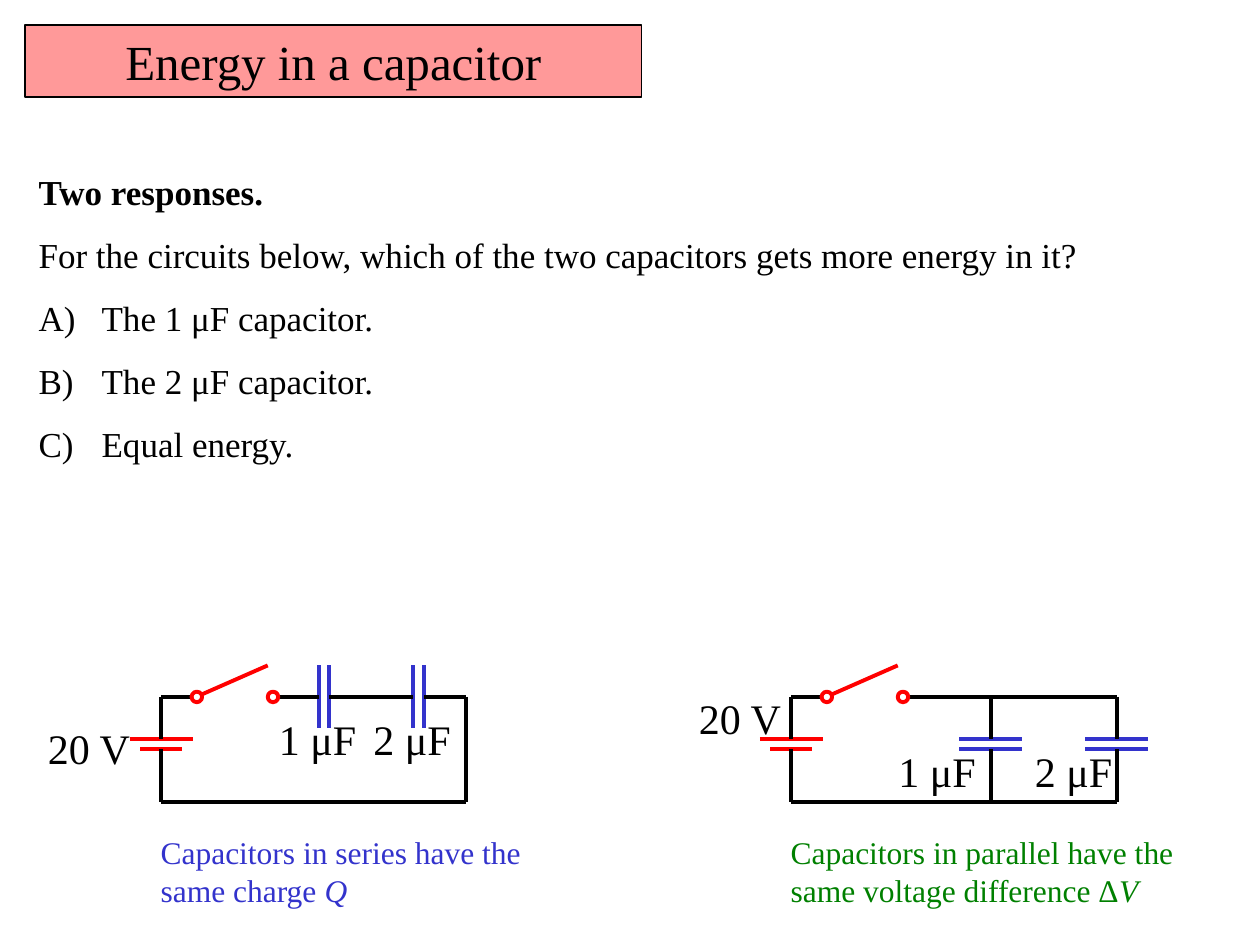
from lxml.etree import SubElement
from pptx import Presentation
from pptx.dml.color import RGBColor
from pptx.enum.shapes import MSO_CONNECTOR, MSO_SHAPE
from pptx.enum.text import MSO_ANCHOR, PP_ALIGN
from pptx.oxml.ns import qn
from pptx.util import Emu, Pt

PX = 9525  # 96 px to the inch
FONT = "Times New Roman"
BLACK, RED, BLUE, GREEN = "000000", "FF0000", "3333CC", "008000"
LINE_WIDTH = 2.25
CELL = 8      # gap between two plates and length of a lead
PLATE = 24    # half length of a long plate
HEIGHT = 80   # height of a circuit loop


def px(*lengths):
    return [Emu(length * PX) for length in lengths]


def rgb(value):
    return RGBColor.from_string(value)


def format_font(font, size, color=BLACK):
    font.name = FONT
    font.size = Pt(size)
    font.color.rgb = rgb(color)


def set_outline(shape, color, width):
    shape.line.color.rgb = rgb(color)
    shape.line.width = Pt(width)


class Circuit:
    """A group of parts placed relative to the top left corner of the loop."""

    def __init__(self, slide, left, top):
        self.left, self.top = left, top
        self.shapes = slide.shapes.add_group_shape().shapes

    def line(self, x1, y1, x2, y2, color=BLACK):
        ends = px(self.left + x1, self.top + y1, self.left + x2, self.top + y2)
        connector = self.shapes.add_connector(MSO_CONNECTOR.STRAIGHT, *ends)
        set_outline(connector, color, LINE_WIDTH)
        SubElement(connector._element.spPr, qn("a:effectLst"))

    def plates(self, x, y, color, second=PLATE, upright=False):
        """Two plates with leads; the first plate is centred on x, y."""
        def part(along1, across1, along2, across2, part_color=BLACK):
            if upright:
                self.line(x + along1, y + across1, x + along2, y + across2, part_color)
            else:
                self.line(x + across1, y + along1, x + across2, y + along2, part_color)

        part(0, -PLATE, 0, PLATE, color)
        part(CELL, -second, CELL, second, color)
        part(-CELL, 0, 0, 0)
        part(CELL, 0, 2 * CELL, 0)

    def switch(self):
        self.line(0, 0, 24, 0)
        self.line(88, 0, 112, 0)
        for x in (23, 81):
            box = px(self.left + x, self.top - 4, 8, 8)
            contact = self.shapes.add_shape(MSO_SHAPE.OVAL, *box)
            contact.shadow.inherit = False
            contact.fill.background()
            set_outline(contact, RED, LINE_WIDTH)
        self.line(31, -2, 81, -24, RED)

    def battery(self):
        self.plates(0, 32, RED, second=16)
        self.line(0, 24, 0, 0)
        self.line(0, 48, 0, HEIGHT)

    def text(self, x, y, width, height, content, size, color=BLACK, symbol=""):
        box = self.shapes.add_textbox(*px(self.left + x, self.top + y, width, height))
        box.text_frame.word_wrap = True
        paragraph = box.text_frame.paragraphs[0]
        paragraph.text = content
        if symbol:
            paragraph.add_run().text = symbol
            paragraph.runs[-1].font.italic = True
        for run in paragraph.runs:
            format_font(run.font, size, color)

    def labels(self, voltage_at, first_at, second_at):
        self.text(*voltage_at, 88, 48, "20 V", 24)
        self.text(*first_at, 104, 48, "1 μF", 24)
        self.text(*second_at, 104, 48, "2 μF", 24)

    def caption(self, content, symbol, color):
        self.text(-10, 99, 336, 68, content, 18, color, symbol)


def add_title(slide, left, top, width, height):
    title = slide.shapes.title
    title.left, title.top, title.width, title.height = px(left, top, width, height)
    title.fill.solid()
    title.fill.fore_color.rgb = rgb("FF9999")
    set_outline(title, BLACK, 0.75)
    title.text_frame.text = "Energy in a capacitor"
    title.text_frame.vertical_anchor = MSO_ANCHOR.TOP
    paragraph = title.text_frame.paragraphs[0]
    paragraph.alignment = PP_ALIGN.CENTER
    format_font(paragraph.runs[0].font, 28)


def add_question(slide, left, top, width, height):
    box = slide.shapes.add_textbox(*px(left, top, width, height))
    box.fill.solid()
    box.fill.fore_color.rgb = rgb("FFFFFF")
    frame = box.text_frame
    frame.word_wrap = True
    frame.text = "\n".join([
        "Two responses.",
        "For the circuits below, which of the two capacitors gets more energy in it?",
        "The 1 μF capacitor.",
        "The 2 μF capacitor.",
        "Equal energy.",
    ])
    for index, paragraph in enumerate(frame.paragraphs):
        properties = paragraph._p.get_or_add_pPr()
        properties.set("marL", str(48 * PX))
        properties.set("indent", str(-48 * PX))
        if index >= 2:
            SubElement(properties, qn("a:buAutoNum"), type="alphaUcParenR")
        paragraph.line_spacing = 1.5
        format_font(paragraph.runs[0].font, 20)
        paragraph.runs[0].font.bold = index == 0


def add_parallel_circuit(slide, left, top):
    circuit = Circuit(slide, left, top)
    first, second = 152, 248
    circuit.switch()
    circuit.battery()
    circuit.line(112, 0, second, 0)
    circuit.line(second, HEIGHT, 0, HEIGHT)
    for x in (first, second):
        circuit.plates(x, 32, BLUE)
        circuit.line(x, 0, x, 24)
        circuit.line(x, 48, x, HEIGHT)
    circuit.labels((-80, -8), (72, 32), (176, 32))
    circuit.caption("Capacitors in parallel have the same voltage difference Δ", "V", GREEN)


def add_series_circuit(slide, left, top):
    circuit = Circuit(slide, left, top)
    right = 232
    circuit.switch()
    circuit.battery()
    for x in (120, 192):
        circuit.plates(x, 0, BLUE, upright=True)
    circuit.line(136, 0, 184, 0)
    circuit.line(208, 0, right, 0)
    circuit.line(right, 0, right, HEIGHT)
    circuit.line(0, HEIGHT, right, HEIGHT)
    circuit.labels((-96, 15), (80, 8), (152, 8))
    circuit.caption("Capacitors in series have the same charge ", "Q", BLUE)


def main():
    presentation = Presentation()
    presentation.slide_width, presentation.slide_height = px(960, 720)
    slide = presentation.slides.add_slide(presentation.slide_layouts[5])
    add_title(slide, 19, 19, 470, 55)
    add_question(slide, 20, 109, 865, 262)
    add_parallel_circuit(slide, 603, 531)
    add_series_circuit(slide, 123, 531)
    presentation.save("out.pptx")


if __name__ == "__main__":
    main()
